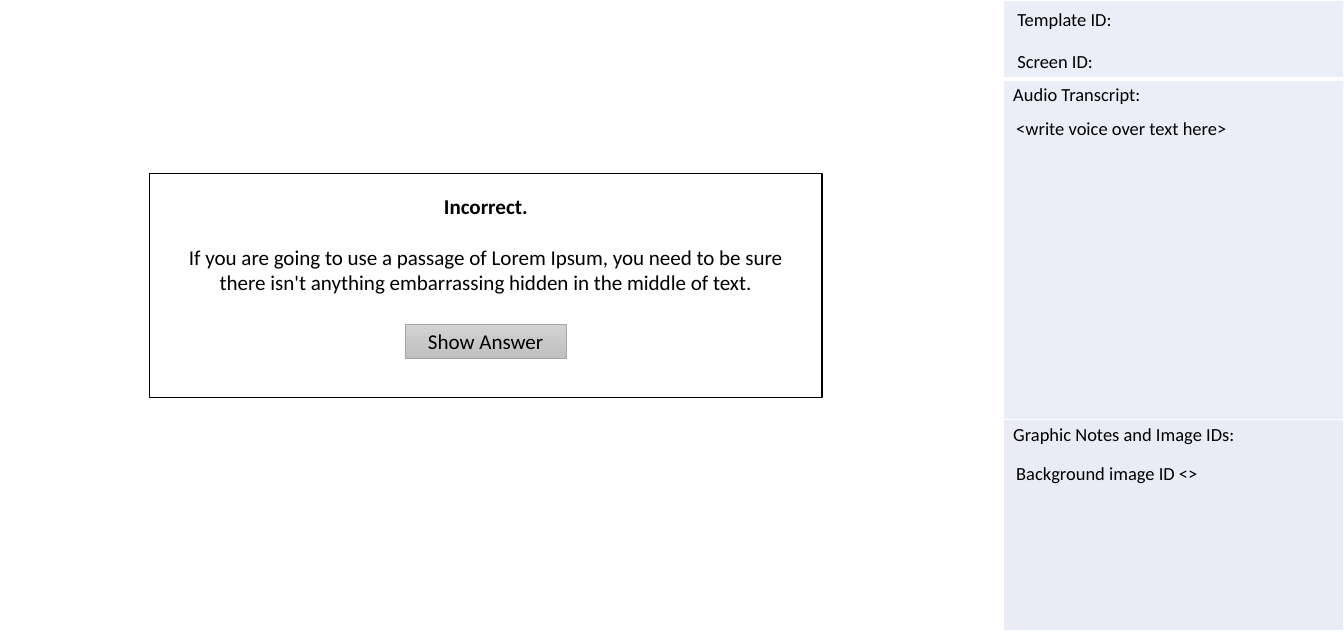
from dataclasses import dataclass
from typing import Any

import pptx
import pptx.dml.color
import pptx.enum.shapes
import pptx.enum.text
import pptx.oxml
import pptx.oxml.ns
import pptx.shapes.autoshape
import pptx.slide
import pptx.util

Cm = pptx.util.Cm
ALIGN = pptx.enum.text.PP_ALIGN
ANCHOR = pptx.enum.text.MSO_ANCHOR
FIT = pptx.enum.text.MSO_AUTO_SIZE


@dataclass(frozen=True)
class Theme:
    font: str = "Calibri"
    ink: str = "000000"
    paper: str = "FFFFFF"
    panel: str = "EAEFF7"
    graphic_panel: str = "E9EBF5"
    button_top: str = "D2D2D2"
    button_bottom: str = "C0C0C0"
    button_line: str = "A5A5A5"
    label_size: float = 14
    feedback_size: float = 16
    paragraph_gap: float = 19.5
    rule: float = 1
    heavy_rule: float = 3
    button_rule: float = 0.5


@dataclass(frozen=True)
class Area:
    left: float
    top: float
    width: float
    height: float

    def lengths(self) -> list[int]:
        return [Cm(side) for side in (self.left, self.top, self.width, self.height)]


@dataclass(frozen=True)
class Label:
    text: str
    area: Area


@dataclass(frozen=True)
class PanelRow:
    text: str
    height: float
    fill: str
    top_rule: float
    bottom_rule: float


THEME = Theme()
PANEL = Area(26.87, 0, 9.12, 16.89)
ROWS = [
    PanelRow("", 2.11, THEME.panel, THEME.rule, THEME.heavy_rule),
    PanelRow("Audio Transcript:", 9.12, THEME.panel, THEME.heavy_rule, THEME.rule),
    PanelRow("Graphic Notes and Image IDs:", 5.66, THEME.graphic_panel, THEME.rule, THEME.rule),
]
LABELS = [
    Label("Screen ID:", Area(27, 1.22, 9.7, 0.86)),
    Label("Template ID:", Area(27, 0.1, 9.7, 0.86)),
    Label("<write voice over text here>", Area(26.97, 3.02, 9.04, 0.86)),
    Label("Background image ID <>", Area(26.97, 12.24, 9.04, 0.86)),
]
FEEDBACK = Area(4.01, 4.65, 18.01, 5.99)
BUTTON = Area(10.85, 8.69, 4.32, 0.91)


def color(value: str) -> pptx.dml.color.RGBColor:
    return pptx.dml.color.RGBColor.from_string(value)


def apply(target: Any, formats: dict[str, Any]) -> None:
    for name, value in formats.items():
        setattr(target, name, value)


def write(para: Any, text: str, size: float, bold: bool = False) -> None:
    span = para.add_run()
    span.text = text
    apply(span.font, {"name": THEME.font, "size": pptx.util.Pt(size), "bold": bold})
    span.font.color.rgb = color(THEME.ink)


def set_border(cell: Any, order: int, side: str, width: float) -> None:
    border = pptx.oxml.parse_xml(
        f'<a:{side} {pptx.oxml.ns.nsdecls("a")} w="{pptx.util.Pt(width)}">'
        f'<a:solidFill><a:srgbClr val="{THEME.paper}"/></a:solidFill></a:{side}>'
    )
    cell._tc.get_or_add_tcPr().insert(order, border)


def add_panel(page: pptx.slide.Slide) -> None:
    table = page.shapes.add_table(len(ROWS), 1, *PANEL.lengths()).table
    apply(table, {"first_row": False, "horz_banding": False})
    for index, row in enumerate(ROWS):
        table.rows[index].height = Cm(row.height)
        cell = table.cell(index, 0)
        cell.fill.solid()
        cell.fill.fore_color.rgb = color(row.fill)
        apply(cell, {"margin_left": Cm(0.27), "margin_right": Cm(0.27),
                     "margin_top": Cm(0.13), "margin_bottom": Cm(0.13)})
        borders = {"lnL": THEME.rule, "lnR": THEME.rule,
                   "lnT": row.top_rule, "lnB": row.bottom_rule}
        for order, (side, width) in enumerate(borders.items()):
            set_border(cell, order, side, width)
        if row.text:
            write(cell.text_frame.paragraphs[0], row.text, THEME.label_size)


def add_label(page: pptx.slide.Slide, label: Label) -> None:
    frame = page.shapes.add_textbox(*label.area.lengths()).text_frame
    apply(frame, {"word_wrap": True, "auto_size": FIT.SHAPE_TO_FIT_TEXT})
    write(frame.paragraphs[0], label.text, THEME.label_size)


def add_box(page: pptx.slide.Slide, area: Area, line: str, width: float,
            formats: dict[str, Any]) -> pptx.shapes.autoshape.Shape:
    kind = pptx.enum.shapes.MSO_SHAPE.RECTANGLE
    box = page.shapes.add_shape(kind, *area.lengths())
    box.shadow.inherit = False
    box.line.color.rgb = color(line)
    box.line.width = pptx.util.Pt(width)
    apply(box.text_frame, {"word_wrap": True, **formats})
    box.text_frame.paragraphs[0].alignment = ALIGN.CENTER
    return box


def add_feedback(page: pptx.slide.Slide) -> None:
    inset = Cm(0.53)
    box = add_box(page, FEEDBACK, THEME.ink, THEME.rule, {
        "vertical_anchor": ANCHOR.TOP, "margin_left": inset, "margin_right": inset,
        "margin_top": inset, "margin_bottom": inset})
    box.fill.solid()
    box.fill.fore_color.rgb = color(THEME.paper)
    write(box.text_frame.paragraphs[0], "Incorrect.", THEME.feedback_size, bold=True)
    para = box.text_frame.add_paragraph()
    apply(para, {"alignment": ALIGN.CENTER,
                 "space_before": pptx.util.Pt(THEME.paragraph_gap)})
    write(para, "If you are going to use a passage of Lorem Ipsum, you need to be sure "
                "there isn't anything embarrassing hidden in the middle of text.",
          THEME.feedback_size)


def add_button(page: pptx.slide.Slide) -> None:
    box = add_box(page, BUTTON, THEME.button_line, THEME.button_rule, {
        "vertical_anchor": ANCHOR.MIDDLE, "margin_left": 0, "margin_right": 0,
        "margin_top": Cm(0.13), "margin_bottom": Cm(0.13)})
    box.fill.gradient()
    box.fill.gradient_angle = 270
    for stop, shade in zip(box.fill.gradient_stops, (THEME.button_top, THEME.button_bottom)):
        stop.color.rgb = color(shade)
    write(box.text_frame.paragraphs[0], "Show Answer", THEME.feedback_size)


def main() -> None:
    deck = pptx.Presentation()
    apply(deck, {"slide_width": Cm(36), "slide_height": Cm(17)})
    page = deck.slides.add_slide(deck.slide_layouts[6])
    add_panel(page)
    for label in LABELS:
        add_label(page, label)
    add_feedback(page)
    add_button(page)
    deck.save("out.pptx")


if __name__ == "__main__":
    main()
